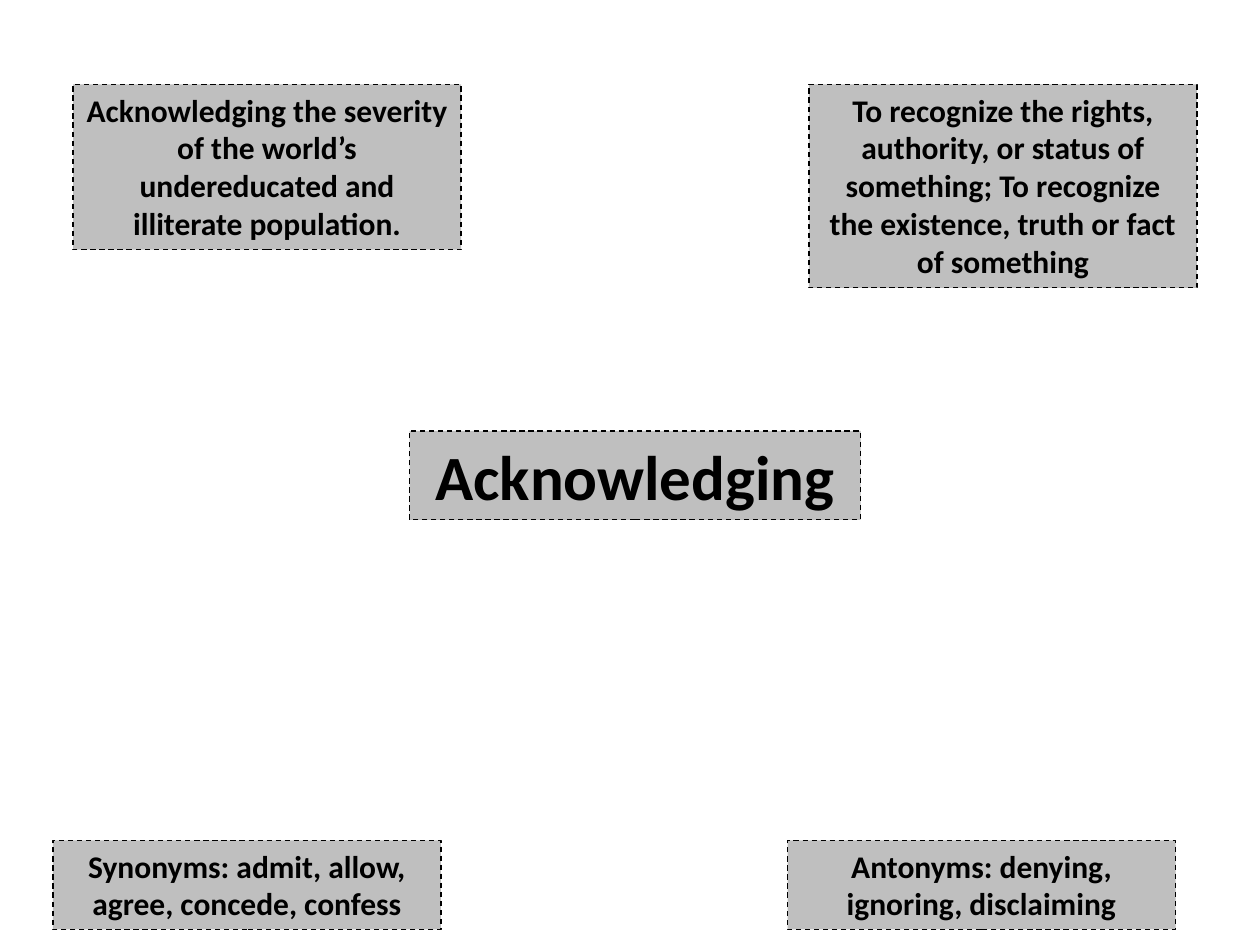
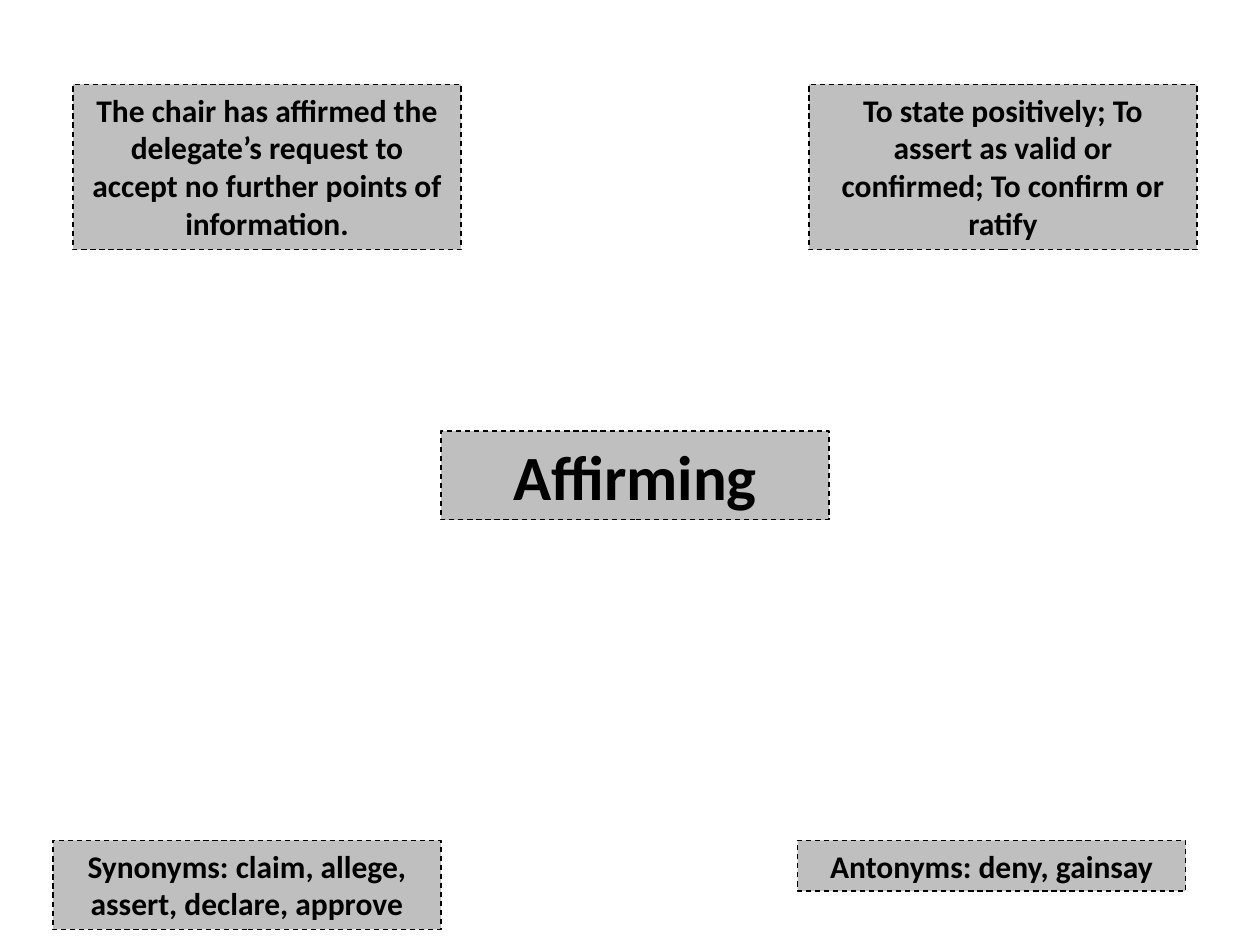
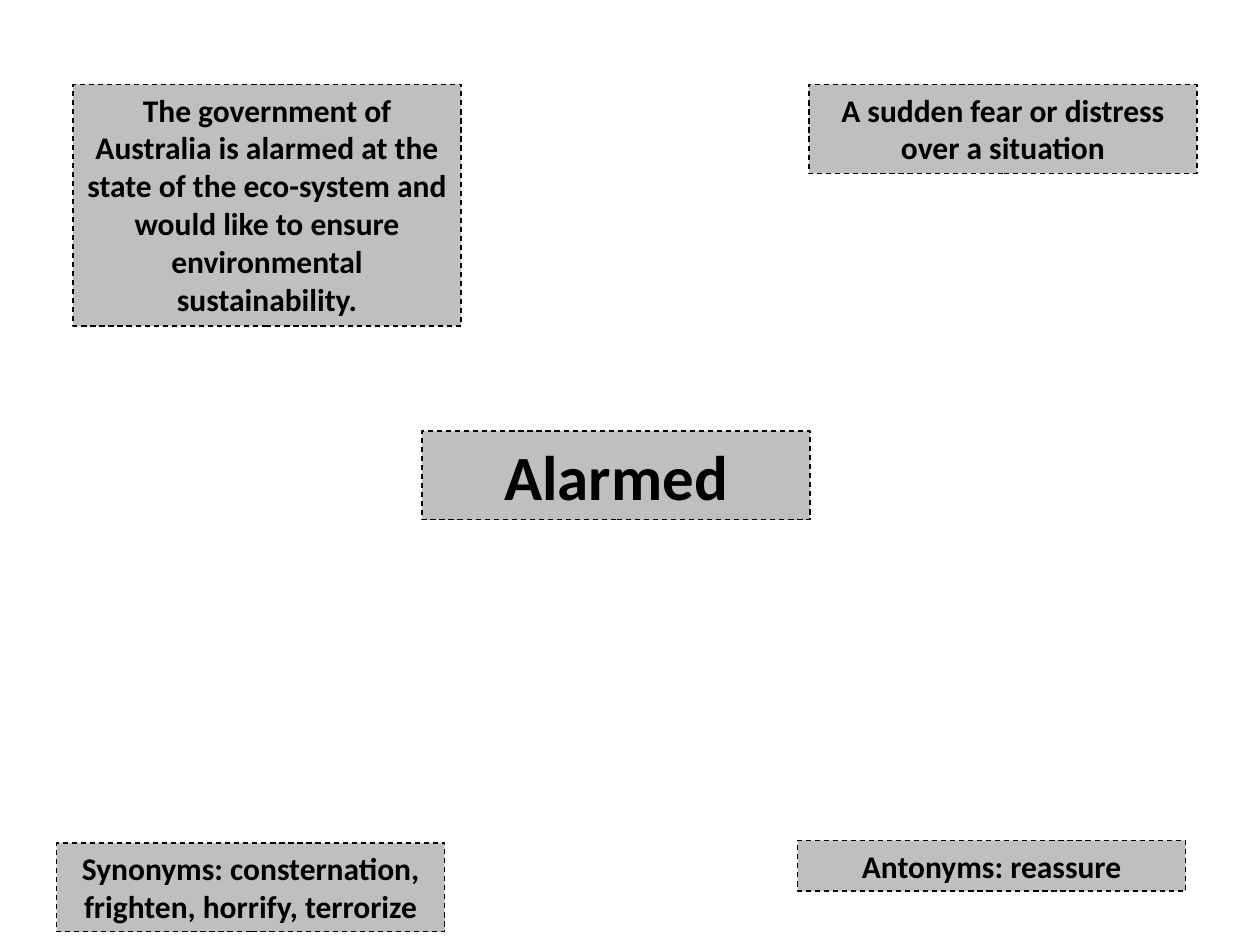
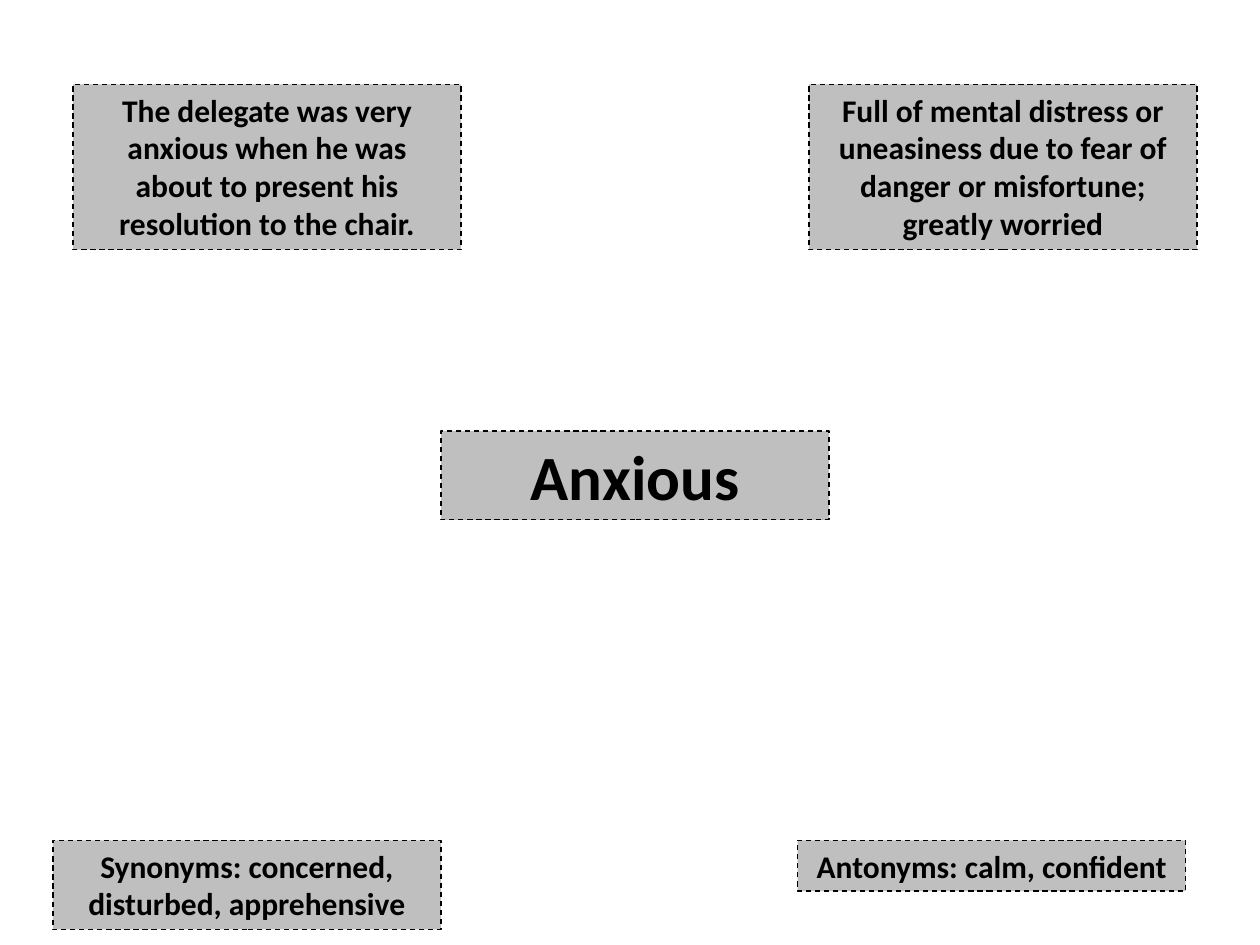
from dataclasses import dataclass
from pptx import Presentation
from pptx.dml.color import RGBColor
from pptx.enum.dml import MSO_LINE
from pptx.enum.text import MSO_AUTO_SIZE, PP_ALIGN
from pptx.util import Inches, Pt


# Colours, type and sizes shared by all slides
@dataclass(frozen=True)
class Theme:
    font: str = "Calibri"
    ink: RGBColor = RGBColor(0x00, 0x00, 0x00)
    fill: RGBColor = RGBColor(0xBF, 0xBF, 0xBF)
    edge: float = 0.75
    head: int = 36
    body: int = 18
    width: float = 3.08
    pad: float = 0.1
    row: float = 0.303  # height of one body line


THEME = Theme()


# One word per slide; each side text comes with its count of lines
@dataclass(frozen=True)
class Card:
    word: str
    anti: tuple
    syn: tuple
    sense: tuple
    usage: tuple
    word_x: float = 3.5
    word_w: float = THEME.width
    anti_x: float = 6.33
    syn_at: tuple = (0.42, 6.67)


CARDS = [
    Card(
        "Acknowledging",
        ("denying, ignoring, disclaiming", 2),
        ("admit, allow, agree, concede, confess", 2),
        ("To recognize the rights, authority, or status of something; "
         "To recognize the existence, truth or fact of something", 5),
        ("Acknowledging the severity of the world’s undereducated "
         "and illiterate population.", 4),
        word_x=3.25, word_w=3.58, anti_x=6.25,
    ),
    Card(
        "Affirming",
        ("deny, gainsay", 1),
        ("claim, allege, assert, declare, approve", 2),
        ("To state positively; To assert as valid or confirmed; "
         "To confirm or ratify", 4),
        ("The chair has affirmed the delegate’s request to accept "
         "no further points of information.", 4),
    ),
    Card(
        "Alarmed",
        ("reassure", 1),
        ("consternation, frighten, horrify, terrorize", 2),
        ("A sudden fear or distress over a situation", 2),
        ("The government of Australia is alarmed at the state of the "
         "eco-system and would like to ensure environmental "
         "sustainability.", 6),
        word_x=3.35, syn_at=(0.45, 6.69),
    ),
    Card(
        "Anxious",
        ("calm, confident", 1),
        ("concerned, disturbed, apprehensive", 2),
        ("Full of mental distress or uneasiness due to fear of danger "
         "or misfortune; greatly worried", 4),
        ("The delegate was very anxious when he was about to present "
         "his resolution to the chair.", 4),
    ),
]


# Grey box with a dashed edge, as tall as its lines of text
def add_box(slide, text, left, top, rows, width=THEME.width, size=THEME.body):
    tall = THEME.pad + rows * THEME.row
    box = slide.shapes.add_textbox(
        Inches(left), Inches(top), Inches(width), Inches(tall))
    box.fill.solid()
    box.fill.fore_color.rgb = THEME.fill
    box.line.color.rgb = THEME.ink
    box.line.width = Pt(THEME.edge)
    box.line.dash_style = MSO_LINE.DASH
    frame = box.text_frame
    frame.word_wrap = True
    frame.auto_size = MSO_AUTO_SIZE.SHAPE_TO_FIT_TEXT
    para = frame.paragraphs[0]
    para.text = text
    para.alignment = PP_ALIGN.CENTER
    font = para.font
    font.name, font.size, font.bold = THEME.font, Pt(size), True
    font.color.rgb = THEME.ink


# Word in the middle, one box in each corner
def add_card(deck, card):
    slide = deck.slides.add_slide(deck.slide_layouts[6])
    add_box(slide, card.word, card.word_x, 3.42, 2, card.word_w, THEME.head)
    corners = [
        ("Antonyms: ", card.anti, (card.anti_x, 6.67)),
        ("Synonyms: ", card.syn, card.syn_at),
        ("", card.sense, (6.42, 0.67)),
        ("", card.usage, (0.58, 0.67)),
    ]
    for label, (text, rows), (left, top) in corners:
        add_box(slide, label + text, left, top, rows)


def main():
    deck = Presentation()
    deck.slide_width, deck.slide_height = Inches(10), Inches(7.5)
    for card in CARDS:
        add_card(deck, card)
    deck.save("out.pptx")


if __name__ == "__main__":
    main()
